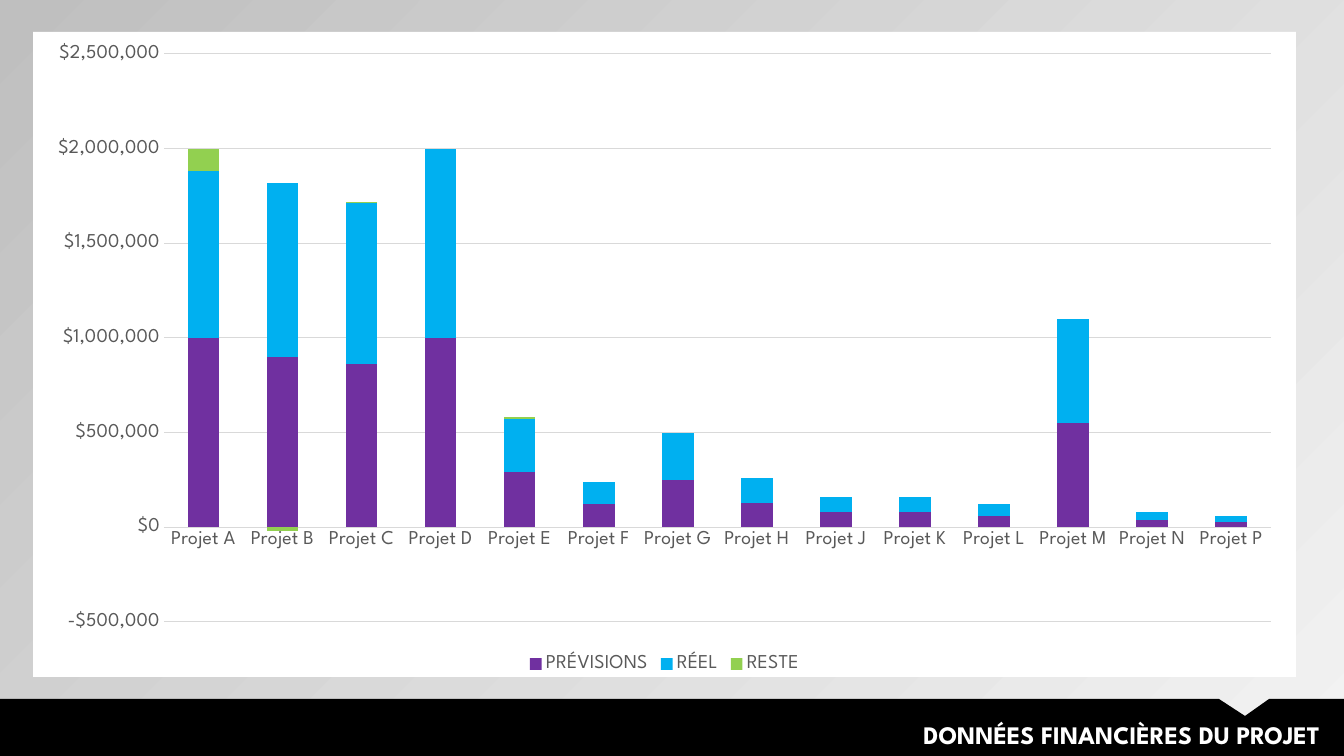
import pptx
import pptx.chart.data
import pptx.dml.color
import pptx.enum.chart
import pptx.enum.text
import pptx.oxml
import pptx.oxml.ns
import pptx.util

RGB = pptx.dml.color.RGBColor
BLACK, WHITE = RGB(0, 0, 0), RGB(255, 255, 255)
GREY, RULE = RGB(0x59, 0x59, 0x59), RGB(0xD9, 0xD9, 0xD9)
LIGHT, DARK = RGB(0xF2, 0xF2, 0xF2), RGB(0xBF, 0xBF, 0xBF)
PURPLE, BLUE, GREEN = RGB(0x70, 0x30, 0xA0), RGB(0, 0xB0, 0xF0), RGB(0x92, 0xD0, 0x50)
FONT = "League Spartan"

# Content
TITLE = "DONNÉES FINANCIÈRES DU PROJET"
NAMES = [f"Projet {mark}" for mark in "ABCDEFGHJKLMNP"]
SMALL = [250000, 130000, 80000, 80000, 60000, 550000, 40000, 30000]
SERIES = [
    ("PRÉVISIONS", PURPLE, [1000000, 900000, 860000, 1000000, 290000, 120000] + SMALL),
    ("RÉEL", BLUE, [880000, 920000, 850000, 1000000, 280000, 120000] + SMALL),
    ("RESTE", GREEN, [120000, -20000, 10000, 0, 10000] + [0] * 9),
]

# Lengths in px
WIDE, HIGH = 1344, 756
BAND = 699
NOTCH = [(1219, BAND), (1245, 716), (1269, BAND)]
HEAD = (417, 714, 913, 40)
PLOT = (33, 32, 1263, 645)
SCALE = pptx.util.Inches(1) / 100.8


def emu(*sizes):
    return [pptx.util.Emu(round(size * SCALE)) for size in sizes]


def style(item, **values):
    for name, value in values.items():
        setattr(item, name, value)


def paint(fill, color):
    fill.solid()
    fill.fore_color.rgb = color


def write(font, size, color, **more):
    style(font, name=FONT, size=pptx.util.Pt(size), **more)
    font.color.rgb = color


def rule(line):
    line.width = pptx.util.Pt(0.75)
    line.color.rgb = RULE


deck = pptx.Presentation()
deck.slide_width, deck.slide_height = emu(WIDE, HIGH)
slide = deck.slides.add_slide(deck.slide_layouts[6])

# Background, light at the lower right
back = slide.background.fill
back.gradient()
back.gradient_angle = 135
for stop, place, color in zip(back.gradient_stops, (0, 1), (LIGHT, DARK)):
    stop.position = place
    stop.color.rgb = color

# Black band with a notch
edge = slide.shapes.build_freeform(0, BAND, scale=SCALE)
edge.add_line_segments(NOTCH + [(WIDE, BAND), (WIDE, HIGH), (0, HIGH)], close=True)
band = edge.convert_to_shape()
band.shadow.inherit = False
paint(band.fill, BLACK)
band.line.fill.background()

# Title
frame = slide.shapes.add_textbox(*emu(*HEAD)).text_frame
style(frame, word_wrap=True, auto_size=pptx.enum.text.MSO_AUTO_SIZE.SHAPE_TO_FIT_TEXT)
para = frame.paragraphs[0]
para.alignment = pptx.enum.text.PP_ALIGN.RIGHT
run = para.add_run()
run.text = TITLE
write(run.font, 18, WHITE, bold=True)

# Chart
data = pptx.chart.data.CategoryChartData()
data.categories = NAMES
for name, _, values in SERIES:
    data.add_series(name, values)
kind = pptx.enum.chart.XL_CHART_TYPE.COLUMN_STACKED
chart = slide.shapes.add_chart(kind, *emu(*PLOT), data).chart
style(chart, has_title=False, has_legend=True)
write(chart.font, 14, BLACK)
plot = chart.plots[0]
style(plot, gap_width=150, overlap=100, vary_by_categories=False)
for bars, (_, color, _) in zip(plot.series, SERIES):
    bars.invert_if_negative = False
    paint(bars.format.fill, color)

# White chart area
area = pptx.oxml.parse_xml(
    f'<c:spPr {pptx.oxml.ns.nsdecls("c", "a")}><a:solidFill><a:srgbClr val="{WHITE}"/>'
    "</a:solidFill><a:ln><a:noFill/></a:ln></c:spPr>"
)
chart._chartSpace.find(pptx.oxml.ns.qn("c:chart")).addnext(area)

# Axes
cats, sums = chart.category_axis, chart.value_axis
for axis in (cats, sums):
    tick = pptx.enum.chart.XL_TICK_MARK.NONE
    style(axis, major_tick_mark=tick, minor_tick_mark=tick)
    write(axis.tick_labels.font, 14, GREY)
rule(cats.format.line)
style(sums, minimum_scale=-500000, maximum_scale=2500000, major_unit=500000,
      has_major_gridlines=True)
style(sums.tick_labels, number_format='"$"#,##0', number_format_is_linked=False)
rule(sums.major_gridlines.format.line)
sums.format.line.fill.background()

# Legend
style(chart.legend, include_in_layout=False,
      position=pptx.enum.chart.XL_LEGEND_POSITION.BOTTOM)
write(chart.legend.font, 14, GREY)

deck.save("out.pptx")
